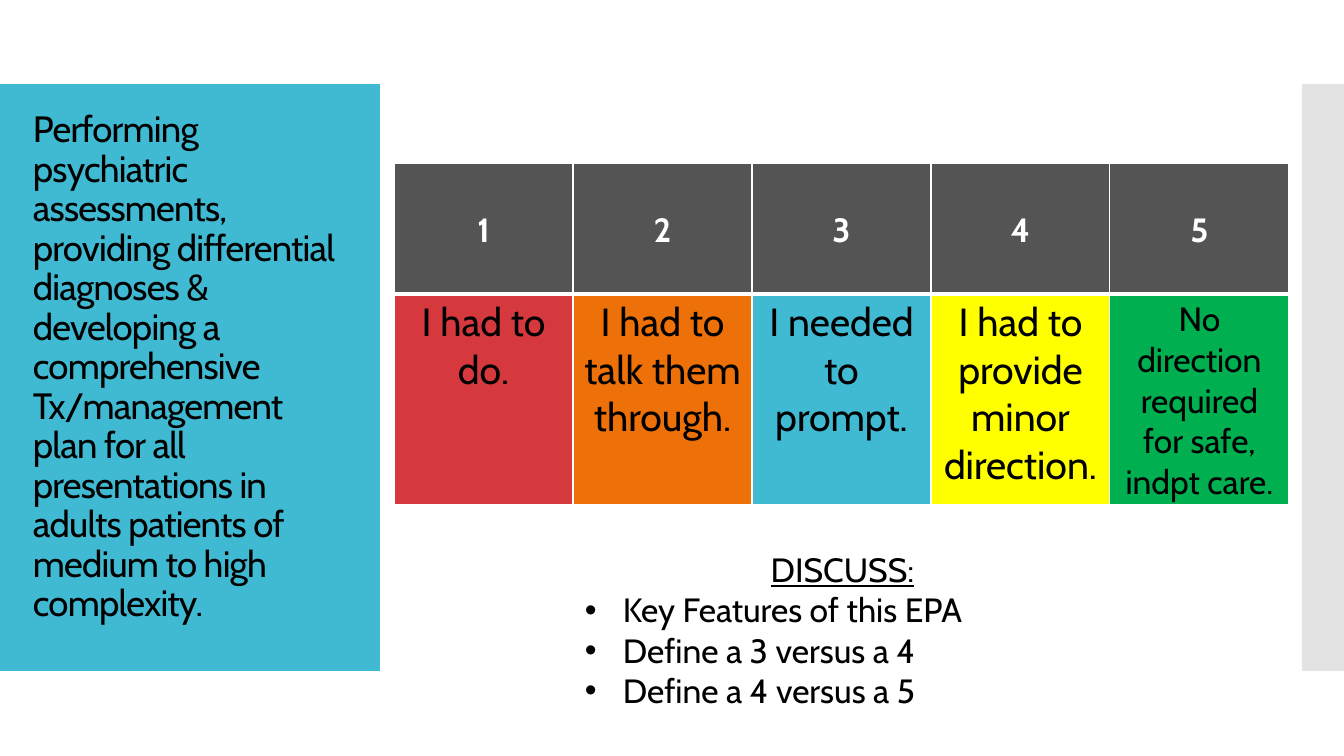
"""Build a slide with a five-point supervision scale and discussion prompts."""
from lxml import etree
from pptx import Presentation
from pptx.dml.color import RGBColor
from pptx.enum.shapes import MSO_SHAPE
from pptx.enum.text import MSO_ANCHOR, PP_ALIGN
from pptx.oxml.ns import qn
from pptx.util import Emu, Pt

LEFT, CENTER = PP_ALIGN.LEFT, PP_ALIGN.CENTER
TOP, MIDDLE = MSO_ANCHOR.TOP, MSO_ANCHOR.MIDDLE
RECTANGLE = MSO_SHAPE.RECTANGLE

TITLE = ("Performing psychiatric assessments, providing differential diagnoses & "
         "developing a comprehensive Tx/management plan for all presentations in "
         "adults patients of medium to high complexity.")
SCALE = [
    ("1", "I had to do.", "D5393D", 28),
    ("2", "I had to talk them through.", "EE7008", 28),
    ("3", "I needed to prompt.", "40BAD2", 28),
    ("4", "I had to provide minor direction.", "FFFF00", 28),
    ("5", "No direction required for safe, indpt care.", "00B050", 24),
]
DISCUSS_HEADING = "DISCUSS:"
DISCUSS_POINTS = ["Key Features of this EPA", "Define a 3 versus a 4", "Define a 4 versus a 5"]

PANELS = [((0, 84, 380, 587), "40BAD2"), ((1302, 84, 42, 587), "E3E3E3")]
TITLE_BOX = (23, 109, 325, 518)
DISCUSS_BOX = (575, 544, 535, 173)
SCALE_LEFT, SCALE_TOP, COLUMN_WIDTH = 394, 163, 179
ROW_HEIGHTS = [131, 211]
HEADER_FILL, BLACK, WHITE = "545454", "000000", "FFFFFF"
BULLET_INDENT = 38


def px(length):
    return Emu(round(length * 914400 / 100.8))


def rgb(value):
    return RGBColor.from_string(value)


def write(paragraph, text, size, color=BLACK, align=LEFT, **formats):
    paragraph.alignment = align
    run = paragraph.add_run()
    run.text = text
    run.font.color.rgb = rgb(color)
    for name, value in {"name": "Cabin", "size": Pt(size), **formats}.items():
        setattr(run.font, name, value)
    return run


def add_text_frame(slide, box, anchor):
    frame = slide.shapes.add_textbox(*map(px, box)).text_frame
    frame.word_wrap = True
    frame.vertical_anchor = anchor
    return frame


def add_bullet(paragraph):
    properties = paragraph._p.get_or_add_pPr()
    properties.set("marL", str(px(BULLET_INDENT)))
    properties.set("indent", str(-px(BULLET_INDENT)))
    etree.SubElement(properties, qn("a:buFont")).set("typeface", "Arial")
    etree.SubElement(properties, qn("a:buChar")).set("char", "•")


def add_borders(cell, widths):
    properties = cell._tc.get_or_add_tcPr()
    for side, width in zip("LRTB", widths):
        line = etree.SubElement(properties, qn(f"a:ln{side}"), w=str(Pt(width)))
        fill = etree.SubElement(line, qn("a:solidFill"))
        etree.SubElement(fill, qn("a:srgbClr")).set("val", WHITE)


def fill_cell(cell, text, fill, size, color, anchor, borders, bold):
    add_borders(cell, borders)
    cell.fill.solid()
    cell.fill.fore_color.rgb = rgb(fill)
    cell.vertical_anchor = anchor
    cell.margin_bottom = 0
    write(cell.text_frame.paragraphs[0], text, size, color, CENTER, bold=bold)


def add_panels(slide):
    for box, color in PANELS:
        panel = slide.shapes.add_shape(RECTANGLE, *map(px, box))
        panel.shadow.inherit = False
        panel.fill.solid()
        panel.fill.fore_color.rgb = rgb(color)
        panel.line.fill.background()


def add_title(slide):
    paragraph = add_text_frame(slide, TITLE_BOX, MIDDLE).paragraphs[0]
    paragraph.line_spacing = 0.9
    run = write(paragraph, TITLE, 26.1)
    run.font._element.set("spc", "-60")


def add_discussion(slide):
    frame = add_text_frame(slide, DISCUSS_BOX, TOP)
    write(frame.paragraphs[0], DISCUSS_HEADING, 24, align=CENTER, underline=True)
    for point in DISCUSS_POINTS:
        paragraph = frame.add_paragraph()
        add_bullet(paragraph)
        write(paragraph, point, 24)


def add_scale(slide):
    box = (SCALE_LEFT, SCALE_TOP, COLUMN_WIDTH * len(SCALE), sum(ROW_HEIGHTS))
    table = slide.shapes.add_table(len(ROW_HEIGHTS), len(SCALE), *map(px, box)).table
    for row, height in zip(table.rows, ROW_HEIGHTS):
        row.height = px(height)
    for index, (score, meaning, color, size) in enumerate(SCALE):
        table.columns[index].width = px(COLUMN_WIDTH)
        fill_cell(table.cell(0, index), score, HEADER_FILL, 24, WHITE, MIDDLE, (1, 1, 1, 3), True)
        fill_cell(table.cell(1, index), meaning, color, size, BLACK, TOP, (1, 1, 3, 1), False)


def main():
    deck = Presentation()
    deck.slide_width, deck.slide_height = px(1344), px(756)
    slide = deck.slides.add_slide(deck.slide_layouts[6])
    add_panels(slide)
    add_title(slide)
    add_discussion(slide)
    add_scale(slide)
    deck.save("out.pptx")


if __name__ == "__main__":
    main()
